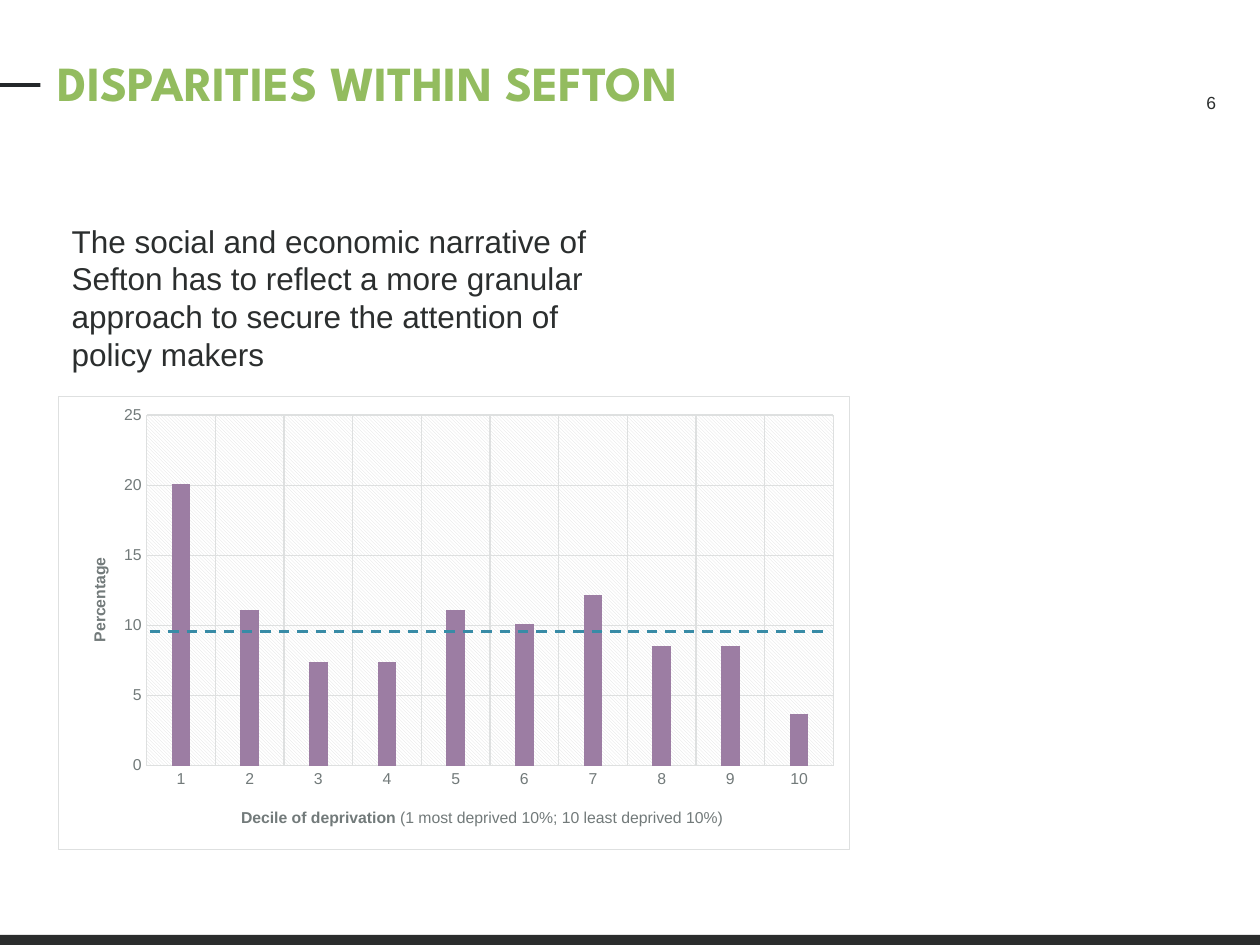
from dataclasses import dataclass

from lxml import etree
from pptx import Presentation
from pptx import util as u
from pptx.chart.data import CategoryChartData
from pptx.dml.color import RGBColor
from pptx.enum import chart as charts, dml, shapes, text
from pptx.oxml import parse_xml
from pptx.oxml.ns import nsdecls, qn

GREEN, INK, GREY, PALE = "93BC5F", "2B2E2E", "727A7A", "DEE0E0"
PURPLE, BLUE, WHITE = "9C7DA3", "388BA6", "FFFFFF"


@dataclass
class Box:
    left: float
    top: float
    width: float
    height: float

    def lengths(self) -> tuple:
        return tuple(u.Inches(v) for v in (self.left, self.top, self.width, self.height))


@dataclass
class Bar:
    box: Box
    color: str


BARS = [
    Bar(Box(0, 0.66, 0.32, 0.03), "24272A"),
    Bar(Box(0, 7.42, 10, 0.08), "2B2D2D"),
]
CHART = Box(0.46, 3.14, 6.29, 3.61)
PLOT = Box(1.16, 3.29, 5.46, 2.79)
SHARES = [20.1, 11.1, 7.4, 7.4, 11.1, 10.1, 12.2, 8.5, 8.5, 3.7]


def rgb(color: str) -> RGBColor:
    return RGBColor.from_string(color)


def style_font(font, size: float, color: str, name: str = "Arial", bold: bool = False) -> None:
    font.name, font.size, font.bold = name, u.Pt(size), bold
    font.color.rgb = rgb(color)


def write_text(shape, content: str, *, size: float, color: str, name: str = "Arial",
               bold: bool = False, align=text.PP_ALIGN.LEFT, margin: float | None = None) -> None:
    frame = shape.text_frame
    frame.word_wrap = True
    frame.auto_size = text.MSO_AUTO_SIZE.NONE
    frame.vertical_anchor = text.MSO_ANCHOR.TOP
    if margin is not None:
        frame.margin_left = frame.margin_right = u.Inches(margin)
        frame.margin_top = frame.margin_bottom = u.Inches(margin)
    paragraph = frame.paragraphs[0]
    paragraph.alignment = align
    run = paragraph.add_run()
    run.text = content
    style_font(run.font, size, color, name, bold)


def add_bar(slide, bar: Bar) -> None:
    shape = slide.shapes.add_shape(shapes.MSO_SHAPE.RECTANGLE, *bar.box.lengths())
    shape.shadow.inherit = False
    shape.fill.solid()
    shape.fill.fore_color.rgb = rgb(bar.color)
    shape.line.fill.background()


def chart_layout(left: float, top: float, plot: Box | None = None):
    values = {"xMode": "edge", "yMode": "edge",
              "x": (left - CHART.left) / CHART.width, "y": (top - CHART.top) / CHART.height}
    if plot:
        values |= {"w": plot.width / CHART.width, "h": plot.height / CHART.height}
    target = '<c:layoutTarget val="inner"/>' if plot else ""
    items = "".join(f'<c:{key} val="{value}"/>' for key, value in values.items())
    return parse_xml(f'<c:layout {nsdecls("c")}><c:manualLayout>{target}{items}'
                     '</c:manualLayout></c:layout>')


def replace_layout(parent, layout, previous=None) -> None:
    for old in parent.findall(qn("c:layout")):
        parent.remove(old)
    if previous is None:
        parent.insert(0, layout)
    else:
        previous.addnext(layout)


def shape_properties(fill: str, line: str):
    return parse_xml(f'<c:spPr {nsdecls("c", "a")}>{fill}{line}</c:spPr>')


def solid(color: str) -> str:
    return f'<a:solidFill><a:srgbClr val="{color}"/></a:solidFill>'


def style_axis(axis, runs: list[tuple[str, bool]], left: float, top: float) -> None:
    axis.major_tick_mark = axis.minor_tick_mark = charts.XL_TICK_MARK.NONE
    axis.has_major_gridlines = True
    gridline = axis.major_gridlines.format.line
    gridline.color.rgb = rgb(PALE)
    gridline.width = u.Pt(0.75)
    style_font(axis.tick_labels.font, 9, GREY)
    paragraph = axis.axis_title.text_frame.paragraphs[0]
    for content, bold in runs:
        run = paragraph.add_run()
        run.text = content
        style_font(run.font, 9, GREY, bold=bold)
    title = axis.axis_title._element
    replace_layout(title, chart_layout(left, top), title.find(qn("c:tx")))


def add_decile_chart(slide) -> None:
    data = CategoryChartData(number_format="0.0")
    data.categories = [str(decile) for decile in range(1, 11)]
    data.add_series("Series 1", SHARES)
    chart = slide.shapes.add_chart(
        charts.XL_CHART_TYPE.COLUMN_CLUSTERED, *CHART.lengths(), data).chart
    chart.has_legend = chart.has_title = False
    style_font(chart.font, 10, INK)

    plot = chart.plots[0]
    plot.gap_width, plot.overlap, plot.vary_by_categories = 267, -43, False
    fill = plot.series[0].format.fill
    fill.solid()
    fill.fore_color.rgb = rgb(PURPLE)

    style_axis(chart.category_axis,
               [("Decile of deprivation", True),
                (" (1 most deprived 10%; 10 least deprived 10%)", False)], 1.88, 6.38)
    chart.category_axis.format.line.color.rgb = rgb(PALE)
    chart.category_axis.format.line.width = u.Pt(0.75)
    style_axis(chart.value_axis, [("Percentage", True)], 0.68, 4.4)
    chart.value_axis.format.line.fill.background()
    chart.value_axis.minimum_scale, chart.value_axis.maximum_scale = 0, 25
    chart.value_axis.major_unit = 5
    chart.value_axis.tick_labels.number_format = "0"
    chart.value_axis.tick_labels.number_format_is_linked = False

    space = chart._chartSpace
    area = space.chart.plotArea
    replace_layout(area, chart_layout(PLOT.left, PLOT.top, PLOT))
    pattern = (f'<a:pattFill prst="ltDnDiag"><a:fgClr><a:srgbClr val="{PALE}"/></a:fgClr>'
               f'<a:bgClr><a:srgbClr val="{WHITE}"/></a:bgClr></a:pattFill>')
    area.append(shape_properties(pattern, "<a:ln><a:noFill/></a:ln>"))
    space.chart.addnext(shape_properties(solid(WHITE), f'<a:ln w="9525">{solid(PALE)}</a:ln>'))


def add_average_line(slide) -> None:
    ends = (u.Inches(v) for v in (1.19, 5.01, 6.54, 5.01))
    line = slide.shapes.add_connector(shapes.MSO_CONNECTOR.STRAIGHT, *ends)
    line.line.color.rgb = rgb(BLUE)
    line.line.width = u.Pt(1.5)
    line.line.dash_style = dml.MSO_LINE.DASH
    etree.SubElement(line._element.spPr, qn("a:effectLst"))


def main() -> None:
    presentation = Presentation()
    presentation.slide_width, presentation.slide_height = u.Inches(10), u.Inches(7.5)
    slide = presentation.slides.add_slide(presentation.slide_layouts[5])
    for bar in BARS:
        add_bar(slide, bar)

    title = slide.shapes.title
    title.left, title.top, title.width, title.height = Box(0.46, 0.42, 7.04, 0.47).lengths()
    write_text(title, "DISPARITIES WITHIN SEFTON", size=28, color=GREEN,
               name="League Spartan", bold=True, margin=0)
    number = slide.shapes.add_textbox(*Box(7.5, 0.68, 2.25, 0.4).lengths())
    write_text(number, "6", size=10, color=INK, align=text.PP_ALIGN.RIGHT)

    add_decile_chart(slide)
    add_average_line(slide)

    narrative = slide.shapes.add_textbox(*Box(0.47, 1.71, 4.54, 1.31).lengths())
    write_text(narrative, "The social and economic narrative of Sefton has to reflect a more "
               "granular approach to secure the attention of policy makers", size=18, color=INK)
    presentation.save("out.pptx")


if __name__ == "__main__":
    main()
